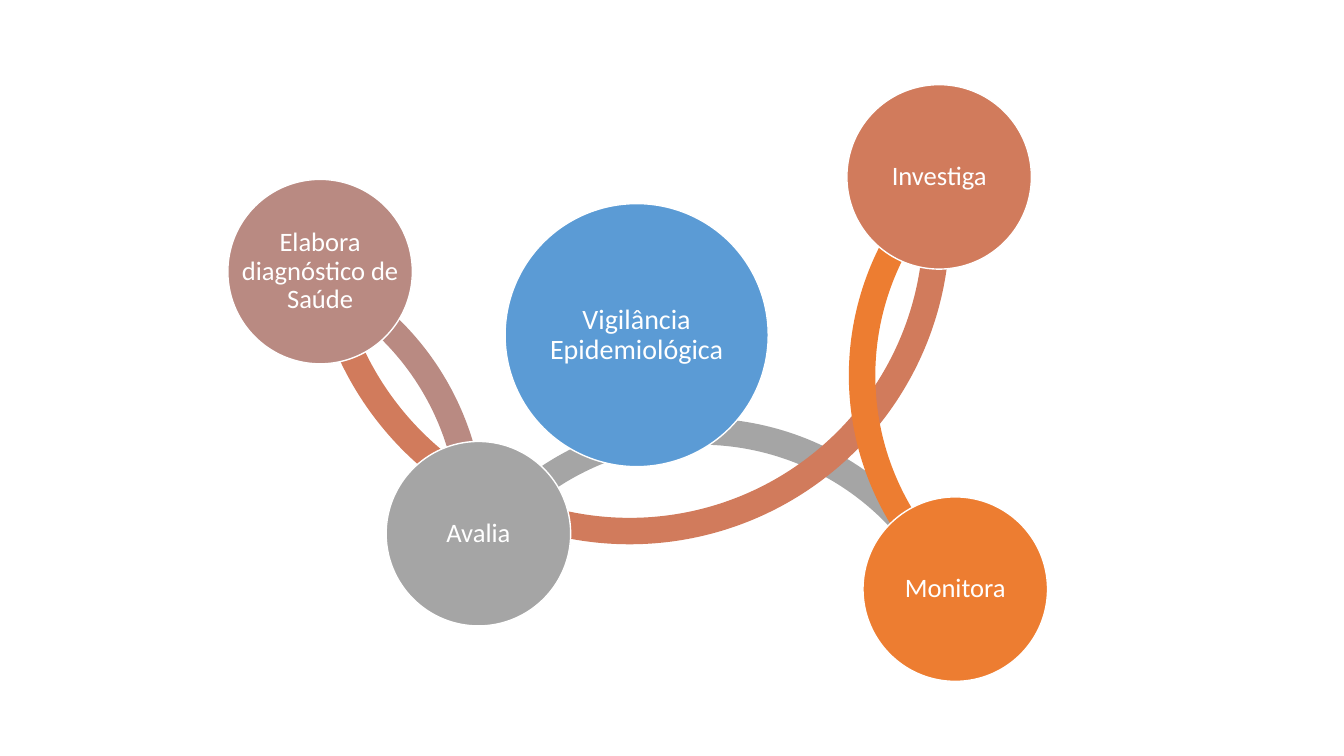
from dataclasses import dataclass
from math import atan2, degrees

from pptx import Presentation
from pptx.dml.color import RGBColor
from pptx.enum.shapes import MSO_SHAPE
from pptx.enum.text import MSO_ANCHOR, PP_ALIGN
from pptx.util import Inches, Pt


@dataclass(frozen=True)
class Theme:
    font: str = "Calibri"
    white: str = "FFFFFF"
    blue: str = "5B9BD5"
    orange: str = "ED7D31"
    terracotta: str = "D17B5C"
    rose: str = "B98A82"
    gray: str = "A5A5A5"
    hub_size: int = 20
    action_size: int = 19


theme = Theme()
presentation = Presentation()
presentation.slide_width = Inches(13.33)
presentation.slide_height = Inches(7.5)
slide = presentation.slides.add_slide(presentation.slide_layouts[6])

# The grid has 100 columns and 100 rows; diameters are given in rows.
column = presentation.slide_width / 100
row = presentation.slide_height / 100
hub_diameter = 34.8
action_diameter = 24.4
band_thickness = 3.5


def add_round(preset, center, diameter, color):
    """Add a filled shape in a square frame around a grid point."""
    side = diameter * row
    left, top = center[0] * column - side / 2, center[1] * row - side / 2
    figure = slide.shapes.add_shape(preset, int(left), int(top), int(side), int(side))
    figure.shadow.inherit = False
    figure.fill.solid()
    figure.fill.fore_color.rgb = RGBColor.from_string(color)
    figure.line.fill.background()
    return figure


def add_label(text, *, frame, size, color=theme.white, font=theme.font):
    """Center a text in the full frame of a circle, wider than its own text area."""
    label = slide.shapes.add_textbox(frame.left, frame.top, frame.width, frame.height)
    body = label.text_frame
    body.word_wrap = True
    body.vertical_anchor = MSO_ANCHOR.MIDDLE
    body.margin_left = body.margin_right = Inches(0.03)
    body.margin_top = body.margin_bottom = Inches(0.03)
    paragraph = body.paragraphs[0]
    paragraph.alignment = PP_ALIGN.CENTER
    paragraph.line_spacing = 0.9
    run = paragraph.add_run()
    run.text = text
    run.font.size = Pt(size)
    run.font.name = font
    run.font.color.rgb = RGBColor.from_string(color)


# Each action: center on the grid, color
actions = {
    "Monitora": ((71.08, 77.93), theme.orange),
    "Investiga": ((69.88, 23.4), theme.terracotta),
    "Elabora diagnóstico de Saúde": ((23.82, 35.93), theme.rose),
    "Avalia": ((35.6, 70.6), theme.gray),
}

# Each band runs clockwise between two actions: start, end, center, diameter
bands = [
    ("Avalia", "Monitora", (52.1, 93.13), 75.6),
    ("Elabora diagnóstico de Saúde", "Avalia", (14.82, 69.27), 75.6),
    ("Investiga", "Elabora diagnóstico de Saúde", (46.85, 29.67), 84.67),
    ("Monitora", "Investiga", (84.43, 49.67), 75.6),
]

for start, end, center, diameter in bands:
    band = add_round(MSO_SHAPE.BLOCK_ARC, center, diameter, actions[start][1])
    for index, action in enumerate((start, end)):
        x, y = actions[action][0]
        angle = degrees(atan2((y - center[1]) * row, (x - center[0]) * column)) % 360
        # An adjustment counts 100000 units, a degree has 60000.
        band.adjustments[index] = angle * 0.6
    band.adjustments[2] = band_thickness / diameter

circles = [("Vigilância Epidemiológica", (47.37, 44.33), theme.blue, hub_diameter, theme.hub_size)]
for action, (center, color) in actions.items():
    circles.append((action, center, color, action_diameter, theme.action_size))

for text, center, color, diameter, size in circles:
    circle = add_round(MSO_SHAPE.OVAL, center, diameter, color)
    circle.line.color.rgb = RGBColor.from_string(theme.white)
    circle.line.width = Pt(1)
    add_label(text, frame=circle, size=size)

presentation.save("out.pptx")
